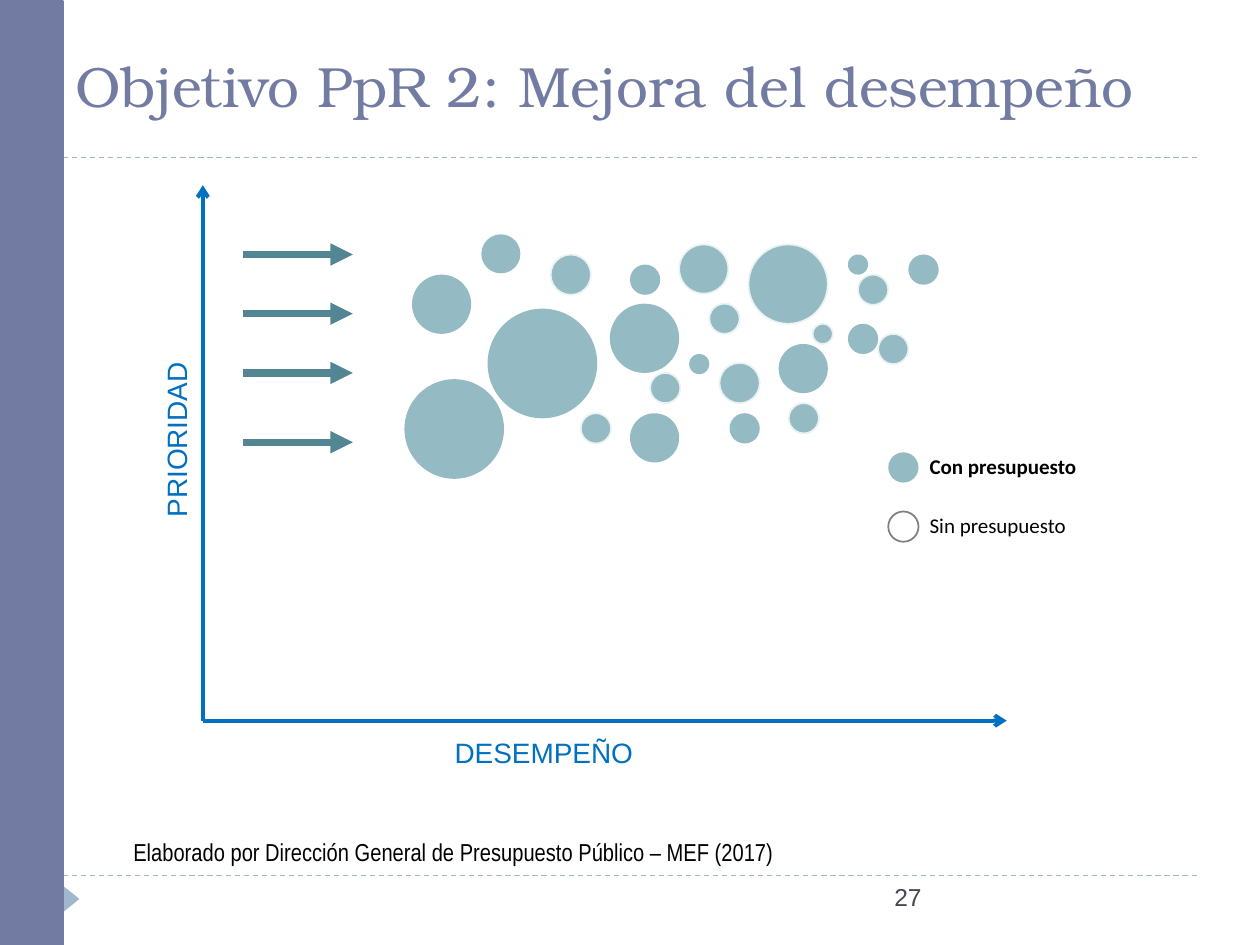
from lxml import etree
from pptx import Presentation
from pptx.dml.color import RGBColor
from pptx.enum.dml import MSO_LINE
from pptx.enum.shapes import MSO_CONNECTOR, MSO_SHAPE
from pptx.enum.text import MSO_ANCHOR
from pptx.oxml.ns import qn
from pptx.util import Inches, Pt

COLORS = {
    "band": "727CA3", "rule": "9FB8CD", "axis": "0070C0", "bubble": "94BAC3",
    "halo": "EBF2F4", "arrow": "528693", "empty": "808080",
    "page": "464653", "text": "000000",
}

TEXTS = [
    ("Objetivo PpR 2: Mejora del desempeño", (0.5, 0.3, 9, 0.69),
     dict(size=32.4, font="TeX Gyre Bonum", color="band", anchor=MSO_ANCHOR.BOTTOM)),
    ("27", (7, 6.95, 2.5, 0.4), dict(size=14, color="page")),
    ("PRIORIDAD", (0.62, 3.24, 1.56, 0.37), dict(size=16, color="axis", rotation=270)),
    ("DESEMPEÑO", (3.51, 5.79, 1.73, 0.37), dict(size=16, color="axis")),
    ("Elaborado por Dirección General de Presupuesto Público – MEF (2017)",
     (0.96, 6.59, 5.67, 0.34), dict(size=14, font="Arial Narrow")),
]

LEGEND = [
    ("Con presupuesto", True, dict(fill="bubble")),
    ("Sin presupuesto", False, dict(line="empty")),
]
LEGEND_LEFT, LEGEND_TOP, LEGEND_STEP, LEGEND_DOT = 7.05, 3.59, 0.47, 0.24

PLAIN_BUBBLES = [
    (3.82, 1.86, 0.31), (6.18, 2.73, 0.39), (5.47, 2.81, 0.16), (3.87, 2.45, 0.87),
    (5, 2.1, 0.24), (3.27, 2.18, 0.47), (3.21, 3.01, 0.79), (6.73, 2.57, 0.24),
    (5, 3.28, 0.39), (4.84, 2.41, 0.55), (6.73, 2.02, 0.16), (7.21, 2.02, 0.24),
    (5.79, 3.28, 0.24),
]
HALO_BUBBLES = [
    (5.39, 1.94, 0.39), (5.63, 2.41, 0.24), (4.61, 3.28, 0.24), (6.81, 2.18, 0.24),
    (6.45, 2.57, 0.16), (5.94, 1.94, 0.63), (6.97, 2.65, 0.24), (6.26, 3.2, 0.24),
    (4.37, 2.02, 0.32), (5.71, 2.88, 0.32), (5.16, 2.96, 0.24),
]

RULE_HEIGHTS = (6.95, 1.25)
ORIGIN = (1.61, 5.72)
AXIS_ENDS = [(1.61, 1.47), (7.99, 5.72)]
ARROW_HEIGHTS = (2.02, 2.49, 2.96, 3.51)

prs = Presentation()
prs.slide_width, prs.slide_height = Inches(10), Inches(7.5)
slide = prs.slides.add_slide(prs.slide_layouts[6])


def rgb(color):
    return RGBColor.from_string(COLORS[color])


def add_text(text, box, size, font="Arial", color="text", bold=False,
             anchor=MSO_ANCHOR.TOP, rotation=0):
    label = slide.shapes.add_textbox(*map(Inches, box))
    label.rotation = rotation
    frame = label.text_frame
    frame.word_wrap = True
    frame.vertical_anchor = anchor
    run = frame.paragraphs[0].add_run()
    run.text = text
    run.font.size, run.font.name, run.font.bold = Pt(size), font, bold
    run.font.color.rgb = rgb(color)


def add_figure(kind, box, fill=None, line=None, width=1, rotation=0):
    figure = slide.shapes.add_shape(kind, *map(Inches, box))
    figure.shadow.inherit = False
    figure.rotation = rotation
    if fill:
        figure.fill.solid()
        figure.fill.fore_color.rgb = rgb(fill)
    else:
        figure.fill.background()
    if line:
        figure.line.color.rgb = rgb(line)
        figure.line.width = Pt(width)
    else:
        figure.line.fill.background()


def add_circle(left, top, diameter, **style):
    add_figure(MSO_SHAPE.OVAL, (left, top, diameter, diameter), **style)


def add_line(start, end, color, width, dash=None, head=None):
    connector = slide.shapes.add_connector(
        MSO_CONNECTOR.STRAIGHT, *map(Inches, (*start, *end)))
    connector.line.color.rgb = rgb(color)
    connector.line.width = Pt(width)
    if dash:
        connector.line.dash_style = dash
    if head:
        etree.SubElement(connector.line._get_or_add_ln(), qn("a:tailEnd"), type=head)
    etree.SubElement(connector._element.spPr, qn("a:effectLst"))


for y in RULE_HEIGHTS:
    add_line((0.5, y), (9.5, y), "rule", 0.75, dash=MSO_LINE.DASH)
add_figure(MSO_SHAPE.ISOSCELES_TRIANGLE, (0.46, 7.07, 0.21, 0.13), fill="rule", rotation=90)
add_figure(MSO_SHAPE.RECTANGLE, (0, 0.01, 0.5, 7.49), fill="band", line="band", width=1.5)

for text, box, style in TEXTS:
    add_text(text, box, **style)

for end in AXIS_ENDS:
    add_line(ORIGIN, end, "axis", 2.25, head="arrow")

for row, (text, bold, style) in enumerate(LEGEND):
    top = LEGEND_TOP + row * LEGEND_STEP
    add_circle(LEGEND_LEFT, top, LEGEND_DOT, **style)
    add_text(text, (LEGEND_LEFT + 0.23, top - 0.04, 1.57, 0.3),
             size=12, font="Calibri", bold=bold)

for bubble in PLAIN_BUBBLES:
    add_circle(*bubble, fill="bubble")
for bubble in HALO_BUBBLES:
    add_circle(*bubble, fill="bubble", line="halo")

for y in ARROW_HEIGHTS:
    add_line((1.93, y), (2.8, y), "arrow", 4.25, head="triangle")

prs.save("out.pptx")
